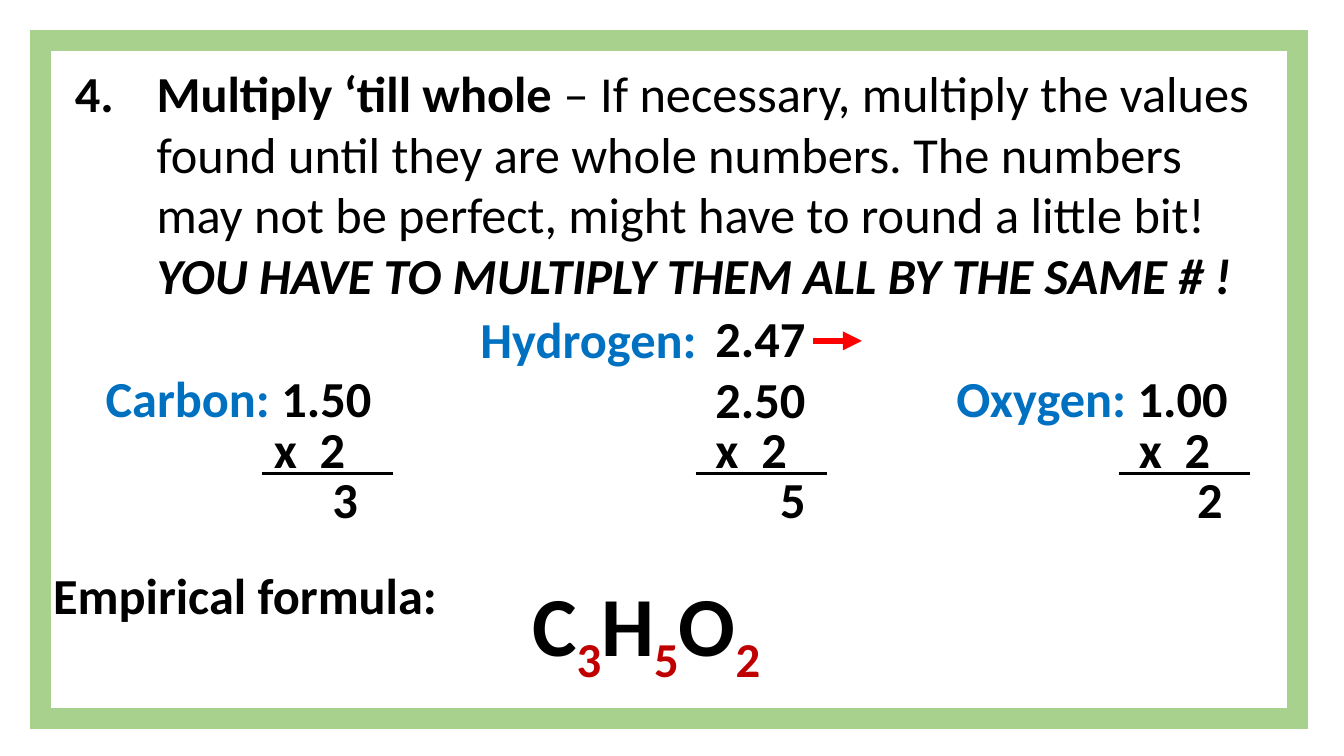
"""Build the 'Multiply till whole' step of an empirical formula lesson."""
from lxml import etree
from pptx import Presentation, util as u
from pptx.dml.color import RGBColor
from pptx.enum import shapes, text
from pptx.oxml import ns

COLORS = {"black": "000000", "white": "FFFFFF", "blue": "0070C0",
          "green": "A9D18E", "red": "FF0000", "crimson": "C00000"}


class LessonSlide:
    """Hold the style and the current slide."""

    font, size, line_height = "Calibri", 36, 1.8

    def __init__(self, prs):
        """Add a slide that keeps only its body placeholder."""
        self.slide = prs.slides.add_slide(prs.slide_layouts[1])
        title = self.slide.shapes.title._element
        title.getparent().remove(title)

    def color(self, name):
        """Return the named colour."""
        return RGBColor.from_string(COLORS[name])

    def child(self, parent, tag, **attrs):
        """Append a DrawingML element."""
        return etree.SubElement(parent, ns.qn(tag), attrs)

    def run(self, p, words, color="black", size=None, bold=True, italic=False, sub=False):
        """Add one styled run."""
        r = p.add_run()
        r.text = words
        f = r.font
        f.name, f.size, f.bold, f.italic = self.font, u.Pt(size or self.size), bold, italic
        f.color.rgb = self.color(color)
        if sub:
            f._element.set("baseline", "-25000")

    def frame(self, x, y, w, h, width):
        """Draw the border behind everything else."""
        sp = self.slide.shapes.add_shape(
            shapes.MSO_SHAPE.RECTANGLE, u.Cm(x), u.Cm(y), u.Cm(w), u.Cm(h))
        sp.shadow.inherit = False
        sp.fill.solid()
        sp.fill.fore_color.rgb = self.color("white")
        sp.line.color.rgb = self.color("green")
        sp.line.width = u.Pt(width)
        self.child(sp.line._get_or_add_ln(), "a:miter", lim="800000")
        sp._element.getparent().insert(2, sp._element)

    def step(self, x, y, w, h, number, indent, runs):
        """Fill the body placeholder with one numbered step."""
        sp = self.slide.placeholders[1]
        sp.left, sp.top, sp.width, sp.height = (u.Cm(v) for v in (x, y, w, h))
        tf = sp.text_frame
        tf.auto_size = text.MSO_AUTO_SIZE.SHAPE_TO_FIT_TEXT
        p = tf.paragraphs[0]
        p.space_before = u.Pt(0)
        pPr = p._p.get_or_add_pPr()
        pPr.set("marL", str(u.Cm(indent)))
        pPr.set("indent", str(-u.Cm(indent)))
        self.child(pPr, "a:buFont", typeface="+mj-lt")
        self.child(pPr, "a:buAutoNum", type="arabicPeriod", startAt=str(number))
        for words, style in runs:
            self.run(p, words, **style)

    def label(self, x, y, w, runs, h=line_height, wrap=False):
        """Add a one-line text box."""
        sp = self.slide.shapes.add_textbox(u.Cm(x), u.Cm(y), u.Cm(w), u.Cm(h))
        tf = sp.text_frame
        tf.word_wrap = wrap
        tf.auto_size = text.MSO_AUTO_SIZE.SHAPE_TO_FIT_TEXT
        for words, style in runs:
            self.run(tf.paragraphs[0], words, **style)

    def line(self, x, y, length, color="black", width=2.25, arrow=False):
        """Draw a horizontal line, with an arrowhead if asked."""
        sp = self.slide.shapes.add_connector(
            shapes.MSO_CONNECTOR.STRAIGHT, u.Cm(x), u.Cm(y), u.Cm(x + length), u.Cm(y))
        sp.line.color.rgb = self.color(color)
        sp.line.width = u.Pt(width)
        if arrow:
            self.child(sp.line._get_or_add_ln(), "a:tailEnd", type="triangle")
        self.child(sp._element.spPr, "a:effectLst")


def main():
    """Build and save the slide."""
    prs = Presentation()
    prs.slide_width, prs.slide_height = u.Cm(33.87), u.Cm(19.05)
    s = LessonSlide(prs)
    blue = {"color": "blue"}
    s.frame(1.02, 1.02, 31.67, 17.09, 15)
    s.step(1.63, 1.45, 30.43, 6.4, 4, 2.06, [
        ("Multiply ‘till whole ", {}),
        ("– If necessary, multiply the values found until they are whole numbers. "
         "The numbers may not be perfect, might have to round a little bit! ", {"bold": False}),
        ("YOU HAVE TO MULTIPLY THEM ALL BY THE SAME # !", {"italic": True})])

    s.label(2.41, 9.12, 7.29, [("Carbon: ", blue), ("1.50", {})])
    s.label(23.85, 9.12, 7.42, [("Oxygen: ", blue), ("1.00", {})])
    s.label(11.86, 7.65, 6.3, [("Hydrogen:", blue)])
    s.label(17.78, 7.62, 4.29, [("2.47", {})], wrap=True)
    s.label(17.78, 9.14, 3.2, [("2.50", {})], wrap=True)
    s.line(20.5, 8.59, 1.22, "red", 4.5, arrow=True)

    for factor_x, rule_x, product_x, product in (
            (6.65, 6.6, 8.13, "3"), (17.78, 17.53, 19.41, "5"), (28.45, 28.19, 29.92, "2")):
        s.label(factor_x, 10.4, 3.23, [("x  2", {})], wrap=True)
        s.line(rule_x, 11.94, 3.3)
        s.label(product_x, 11.66, 1.17, [(product, {})])

    s.label(1.09, 14.1, 10.29, [("Empirical formula:", {})])
    formula = []
    for element, count in zip("CHO", "352"):
        formula += [(element, {"size": 60}),
                    (count, {"size": 60, "color": "crimson", "sub": True})]
    s.label(13.16, 14.3, 7.82, formula, h=2.82, wrap=True)
    prs.save("out.pptx")


if __name__ == "__main__":
    main()
